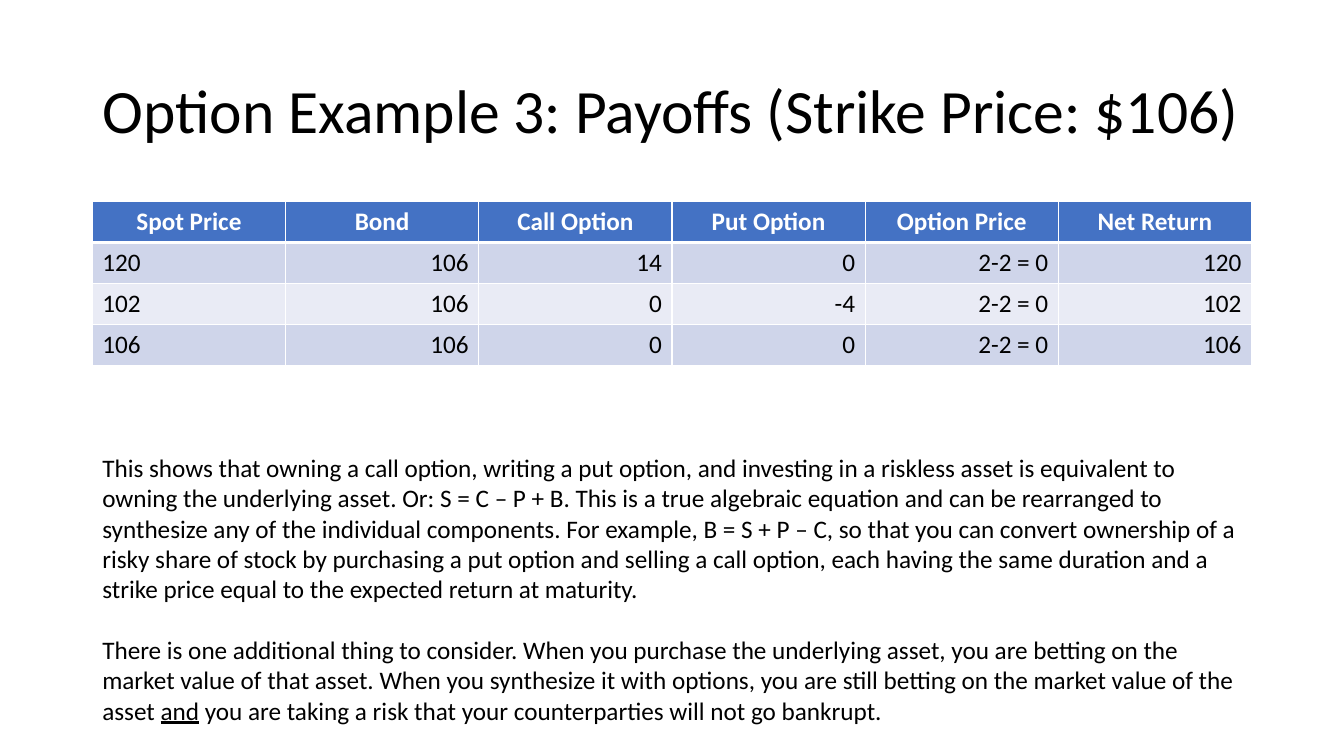
from dataclasses import dataclass

import lxml.etree
import pptx
import pptx.dml.color
import pptx.enum.text
import pptx.oxml.ns
import pptx.util

Pt = pptx.util.Pt
ALIGN = pptx.enum.text.PP_ALIGN
ANCHOR = pptx.enum.text.MSO_ANCHOR

TITLE = "Option Example 3: Payoffs (Strike Price: $106)"
PAYOFFS = [
    ("Spot Price", "Bond", "Call Option", "Put Option", "Option Price", "Net Return"),
    ("120", "106", "14", "0", "2-2 = 0", "120"),
    ("102", "106", "0", "-4", "2-2 = 0", "102"),
    ("106", "106", "0", "0", "2-2 = 0", "106"),
]
# Each paragraph is a list of (text, underlined) runs.
EXPLANATION = [
    [("This shows that owning a call option, writing a put option, and investing in a "
      "riskless asset is equivalent to owning the underlying asset. Or: S = C – P + B. "
      "This is a true algebraic equation and can be rearranged to synthesize any of the "
      "individual components. For example, B = S + P – C, so that you can convert "
      "ownership of a risky share of stock by purchasing a put option and selling a call "
      "option, each having the same duration and a strike price equal to the expected "
      "return at maturity.", False)],
    [("There is one additional thing to consider. When you purchase the underlying "
      "asset, you are betting on the market value of that asset. When you synthesize it "
      "with options, you are still betting on the market value of the asset ", False),
     ("and", True),
     (" you are taking a risk that your counterparties will not go bankrupt.", False)],
]


@dataclass(frozen=True)
class Theme:
    font: str = "Calibri"
    ink: str = "000000"
    paper: str = "FFFFFF"
    header: str = "4472C4"
    bands: tuple = ("CFD5EA", "E9EBF5")
    title_size: float = 44
    body_size: float = 18
    rule: float = 1
    header_rule: float = 3


THEME = Theme()
SLIDE_WIDTH, SLIDE_HEIGHT = 960, 540
MARGIN = 66
CONTENT_WIDTH = SLIDE_WIDTH - 2 * MARGIN
TITLE_TOP, TITLE_HEIGHT = 28.75, 104.4
TABLE_TOP, ROW_HEIGHT = 144, 29.2
TEXT_TOP, TEXT_HEIGHT = 319.6, 204
PARAGRAPH_GAP = 22


def rgb(value):
    return pptx.dml.color.RGBColor.from_string(value)


def write(paragraph, text, size=THEME.body_size, color=THEME.ink, bold=False,
          underline=False, align=ALIGN.LEFT):
    paragraph.alignment = align
    run = paragraph.add_run()
    run.text = text
    font = run.font
    font.name, font.size, font.bold = THEME.font, Pt(size), bold
    font.underline = underline
    font.color.rgb = rgb(color)


def add_borders(cell, **widths):
    """Draw cell borders; call before filling, as the schema puts lines first."""
    properties = cell._tc.get_or_add_tcPr()
    qn = pptx.oxml.ns.qn
    for side, width in widths.items():
        line = lxml.etree.SubElement(properties, qn(f"a:ln{side}"), w=str(Pt(width)))
        fill = lxml.etree.SubElement(line, qn("a:solidFill"))
        lxml.etree.SubElement(fill, qn("a:srgbClr"), val=THEME.paper)


def add_title(slide):
    title = slide.shapes.title
    title.left, title.top = Pt(MARGIN), Pt(TITLE_TOP)
    title.width, title.height = Pt(CONTENT_WIDTH), Pt(TITLE_HEIGHT)
    frame = title.text_frame
    frame.word_wrap = True
    frame.auto_size = pptx.enum.text.MSO_AUTO_SIZE.NONE
    frame.vertical_anchor = ANCHOR.MIDDLE
    frame.paragraphs[0].line_spacing = 0.9
    write(frame.paragraphs[0], TITLE, size=THEME.title_size)


def add_payoffs(slide):
    row_count, column_count = len(PAYOFFS), len(PAYOFFS[0])
    table = slide.shapes.add_table(
        row_count, column_count, Pt(MARGIN), Pt(TABLE_TOP),
        Pt(CONTENT_WIDTH), Pt(ROW_HEIGHT * row_count)).table
    for row, values in enumerate(PAYOFFS):
        is_header = row == 0
        for column, value in enumerate(values):
            cell = table.cell(row, column)
            add_borders(cell, L=THEME.rule, R=THEME.rule,
                        T=THEME.header_rule if row == 1 else THEME.rule,
                        B=THEME.header_rule if is_header else THEME.rule)
            cell.fill.solid()
            cell.fill.fore_color.rgb = rgb(
                THEME.header if is_header else THEME.bands[(row - 1) % 2])
            if is_header:
                align = ALIGN.CENTER
            else:
                align = ALIGN.LEFT if column == 0 else ALIGN.RIGHT
            write(cell.text_frame.paragraphs[0], value, bold=is_header, align=align,
                  color=THEME.paper if is_header else THEME.ink)


def add_explanation(slide):
    frame = slide.shapes.add_textbox(
        Pt(MARGIN), Pt(TEXT_TOP), Pt(CONTENT_WIDTH), Pt(TEXT_HEIGHT)).text_frame
    frame.word_wrap = True
    for index, runs in enumerate(EXPLANATION):
        paragraph = frame.add_paragraph() if index else frame.paragraphs[0]
        paragraph.space_before = Pt(PARAGRAPH_GAP if index else 0)
        for text, underline in runs:
            write(paragraph, text, underline=underline)


def main():
    deck = pptx.Presentation()
    deck.slide_width, deck.slide_height = Pt(SLIDE_WIDTH), Pt(SLIDE_HEIGHT)
    slide = deck.slides.add_slide(deck.slide_layouts.get_by_name("Title Only"))
    add_title(slide)
    add_payoffs(slide)
    add_explanation(slide)
    deck.save("out.pptx")


if __name__ == "__main__":
    main()
